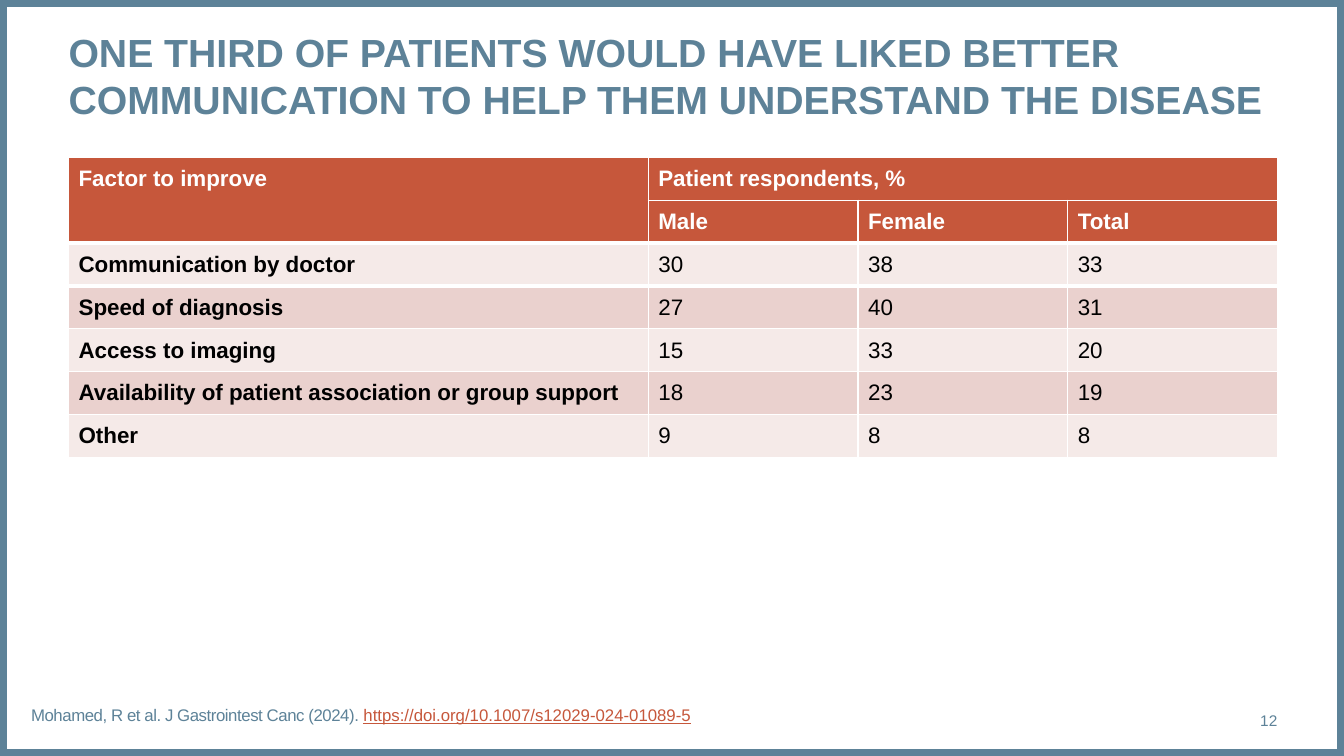
"""Build a slide on what patients would have liked improved, with a results table."""
from dataclasses import dataclass

from lxml.etree import SubElement
from pptx import Presentation
from pptx.dml.color import RGBColor
from pptx.enum.shapes import MSO_SHAPE
from pptx.enum.text import MSO_ANCHOR, PP_ALIGN
from pptx.oxml.ns import qn
from pptx.util import Inches, Pt


@dataclass(frozen=True)
class Theme:
    font: str = "Arial"
    slate: str = "5D8298"
    rust: str = "C6573B"
    pale: str = "F5EAE8"
    blush: str = "EAD1CE"
    white: str = "FFFFFF"
    black: str = "000000"
    title: int = 28
    body: int = 16
    source: int = 12
    number: int = 11


theme = Theme()


def write(frame, text, size, color, bold=False, underline=False, tracking=0,
          align=PP_ALIGN.LEFT):
    paragraph = frame.paragraphs[0]
    paragraph.alignment = align
    run = paragraph.add_run()
    run.text = text
    run.font.name = theme.font
    run.font.size = Pt(size)
    run.font.bold = bold
    run.font.underline = underline
    run.font.color.rgb = RGBColor.from_string(color)
    if tracking:
        run.font._element.set("spc", str(tracking))
    return paragraph


def add_borders(cell, top, bottom):
    properties = cell._tc.get_or_add_tcPr()
    for side, width in (("L", 1), ("R", 1), ("T", top), ("B", bottom)):
        line = SubElement(properties, qn(f"a:ln{side}"), w=str(Pt(width)))
        fill = SubElement(line, qn("a:solidFill"))
        SubElement(fill, qn("a:srgbClr"), val=theme.white)


presentation = Presentation()
presentation.slide_width = Inches(13.33)
presentation.slide_height = Inches(7.5)
slide = presentation.slides.add_slide(presentation.slide_layouts[5])

frame = slide.shapes.add_shape(MSO_SHAPE.RECTANGLE, 0, 0, Inches(13.33), Inches(7.5))
frame.shadow.inherit = False
frame.fill.background()
frame.line.color.rgb = RGBColor.from_string(theme.slate)
frame.line.width = Pt(10)

title = slide.shapes.title
title.left, title.top = Inches(0.68), Inches(0.28)
title.width, title.height = Inches(11.99), Inches(0.94)
headline = title.text_frame
headline.word_wrap = True
headline.vertical_anchor = MSO_ANCHOR.TOP
headline.margin_left = headline.margin_right = 0
headline.margin_top = headline.margin_bottom = 0
heading = write(
    headline,
    "ONE THIRD OF PATIENTS WOULD HAVE LIKED BETTER "
    "COMMUNICATION TO HELP THEM UNDERSTAND THE DISEASE",
    size=theme.title, color=theme.slate, bold=True)
heading.line_spacing = Pt(33.6)

responses = [
    ("Factor to improve", "Patient respondents, %", "", ""),
    ("", "Male", "Female", "Total"),
    ("Communication by doctor", "30", "38", "33"),
    ("Speed of diagnosis", "27", "40", "31"),
    ("Access to imaging", "15", "33", "20"),
    ("Availability of patient association or group support", "18", "23", "19"),
    ("Other", "9", "8", "8"),
]
header_rows = 2
table = slide.shapes.add_table(len(responses), 4, Inches(0.68), Inches(1.56),
                               Inches(11.99), Inches(2.98)).table
for column, width in zip(table.columns, (5.75, 2.08, 2.08, 2.08)):
    column.width = Inches(width)

for row, values in enumerate(responses):
    is_header = row < header_rows
    band = theme.rust if is_header else (theme.pale, theme.blush)[row % 2]
    for column, value in enumerate(values):
        cell = table.cell(row, column)
        cell.margin_left = cell.margin_right = Inches(0.1)
        cell.margin_top, cell.margin_bottom = Inches(0.09), Inches(0.07)
        add_borders(cell, top=3 if row in (2, 3) else 1,
                    bottom=3 if row in (1, 2) else 1)
        cell.fill.solid()
        cell.fill.fore_color.rgb = RGBColor.from_string(band)
        if value:
            write(cell.text_frame, value, size=theme.body,
                  color=theme.white if is_header else theme.black,
                  bold=is_header or column == 0)
table.cell(0, 0).merge(table.cell(1, 0))
table.cell(0, 1).merge(table.cell(0, 3))

citation = slide.shapes.add_textbox(Inches(0.21), Inches(6.94),
                                    Inches(9.77), Inches(0.3)).text_frame
citation.word_wrap = True
write(citation, "Mohamed, R et al. J Gastrointest Canc (2024). ",
      size=theme.source, color=theme.slate, tracking=-30)
write(citation, "https://doi.org/10.1007/s12029-024-01089-5",
      size=theme.source, color=theme.rust, underline=True)

page_number = slide.shapes.add_textbox(Inches(11.81), Inches(6.95),
                                       Inches(0.86), Inches(0.4)).text_frame
page_number.margin_left = page_number.margin_right = 0
page_number.margin_top = page_number.margin_bottom = 0
page_number.word_wrap = True
page_number.vertical_anchor = MSO_ANCHOR.MIDDLE
write(page_number, "12", size=theme.number, color=theme.slate, align=PP_ALIGN.RIGHT)

presentation.save("out.pptx")
